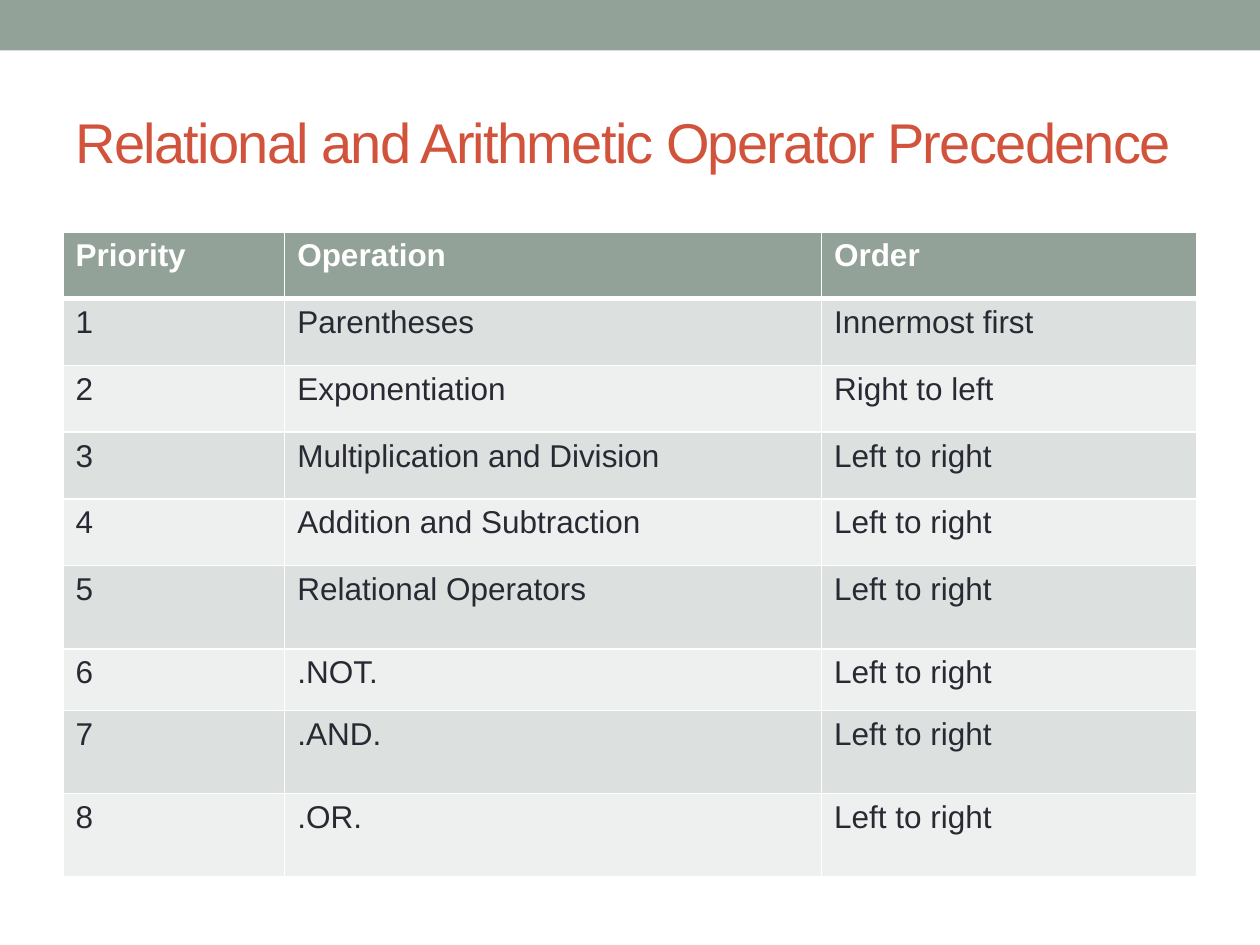
from lxml import etree
from pptx import Presentation
from pptx.dml.color import RGBColor
from pptx.enum import shapes, text
from pptx.oxml import ns
from pptx.util import Inches, Pt

TITLE = "Relational and Arithmetic Operator Precedence"
HEADER = ("Priority", "Operation", "Order")
OPERATIONS = [
    ("Parentheses", "Innermost first"),
    ("Exponentiation", "Right to left"),
    ("Multiplication and Division", "Left to right"),
    ("Addition and Subtraction", "Left to right"),
    ("Relational Operators", "Left to right"),
    (".NOT.", "Left to right"),
    (".AND.", "Left to right"),
    (".OR.", "Left to right"),
]
COL_WIDTHS = (1.76, 4.26, 2.98)
ROW_HEIGHTS = [0.53] * 5 + [0.66, 0.49, 0.66, 0.66]

SAGE = RGBColor(0x93, 0xA2, 0x99)
RUST = RGBColor(0xD2, 0x53, 0x3C)
INK = RGBColor(0x29, 0x29, 0x34)
WHITE = RGBColor(0xFF, 0xFF, 0xFF)
BANDS = (RGBColor(0xDC, 0xE0, 0xDE), RGBColor(0xEE, 0xF0, 0xEF))


def write(tf, content, size=18, color=INK, bold=False, spacing=None):
    p = tf.paragraphs[0]
    p.alignment = text.PP_ALIGN.LEFT
    r = p.add_run()
    r.text = content
    r.font.name = "Arial"
    r.font.size = Pt(size)
    r.font.bold = bold
    r.font.color.rgb = color
    if spacing is not None:
        r.font._element.set("spc", str(spacing * 100))


def add_borders(cell, top=1, bottom=1):
    tcPr = cell._tc.get_or_add_tcPr()
    for side, width in (("L", 1), ("R", 1), ("T", top), ("B", bottom)):
        ln = etree.SubElement(tcPr, ns.qn(f"a:ln{side}"), w=str(Pt(width)))
        fill = etree.SubElement(ln, ns.qn("a:solidFill"))
        etree.SubElement(fill, ns.qn("a:srgbClr"), val=str(WHITE))


def add_precedence_table(s):
    rows = [HEADER] + [(str(n), *op) for n, op in enumerate(OPERATIONS, 1)]
    table = s.shapes.add_table(
        len(rows), len(HEADER), Inches(0.5), Inches(1.84),
        Inches(sum(COL_WIDTHS)), Inches(sum(ROW_HEIGHTS))).table
    for col, width in zip(table.columns, COL_WIDTHS):
        col.width = Inches(width)
    for i, (values, height) in enumerate(zip(rows, ROW_HEIGHTS)):
        table.rows[i].height = Inches(height)
        header = i == 0
        for cell, value in zip(table.rows[i].cells, values):
            add_borders(cell, top=3 if i == 1 else 1, bottom=3 if header else 1)
            cell.fill.solid()
            cell.fill.fore_color.rgb = SAGE if header else BANDS[(i - 1) % 2]
            write(cell.text_frame, value, color=WHITE if header else INK, bold=header)


def main():
    prs = Presentation()
    prs.slide_width, prs.slide_height = Inches(10), Inches(7.5)
    s = prs.slides.add_slide(prs.slide_layouts[5])

    bar = s.shapes.add_shape(shapes.MSO_SHAPE.RECTANGLE, 0, 0, prs.slide_width, Inches(0.4))
    bar.shadow.inherit = False
    bar.fill.solid()
    bar.fill.fore_color.rgb = SAGE
    bar.line.fill.background()

    title = s.shapes.title
    title.left, title.top = Inches(0.5), Inches(0.58)
    title.width, title.height = Inches(9), Inches(1.08)
    tf = title.text_frame
    tf.word_wrap = True
    tf.auto_size = text.MSO_AUTO_SIZE.NONE
    tf.vertical_anchor = text.MSO_ANCHOR.MIDDLE
    write(tf, TITLE, size=32, color=RUST, spacing=-1)

    add_precedence_table(s)
    prs.save("out.pptx")


if __name__ == "__main__":
    main()
